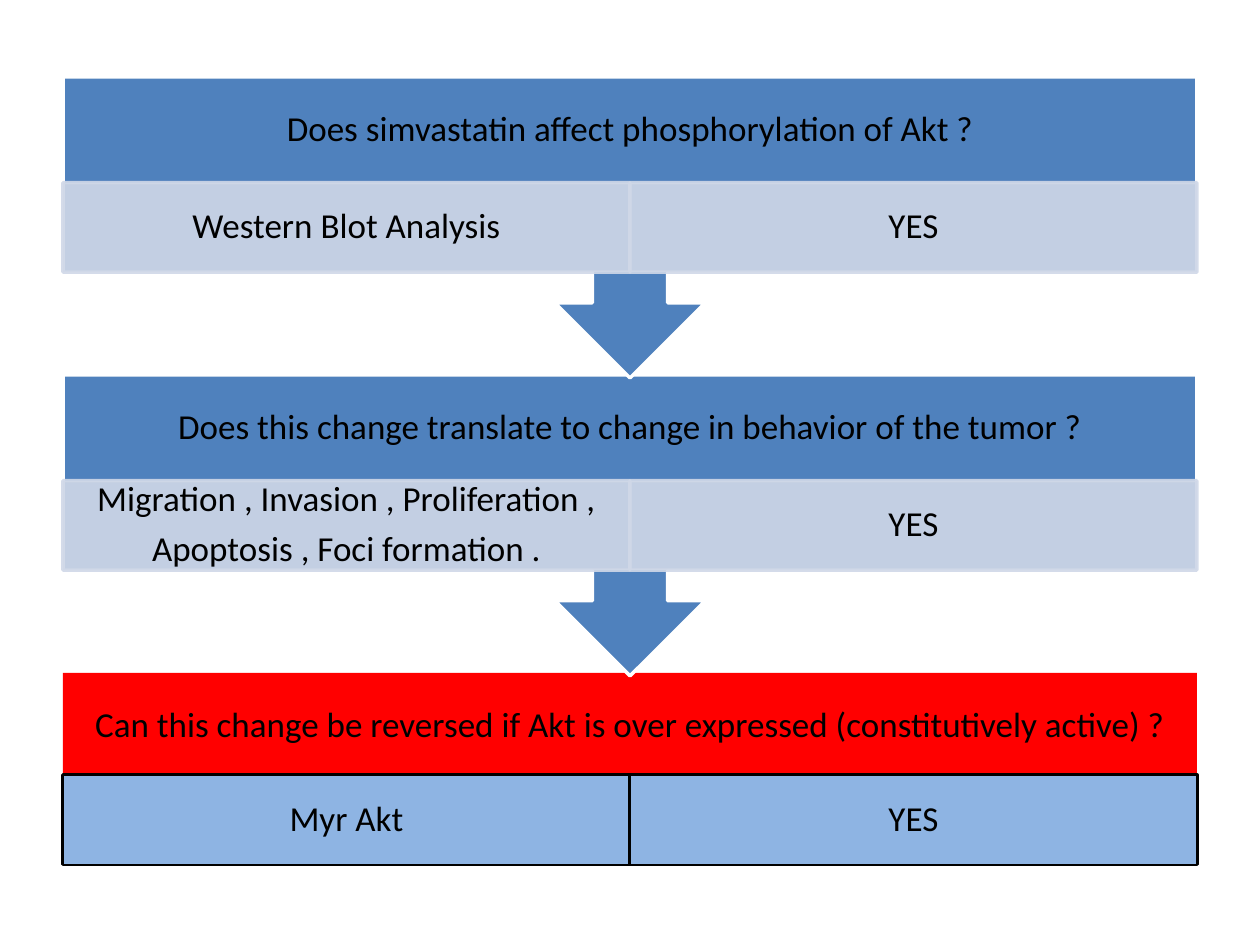
from pptx import Presentation
from pptx.dml.color import RGBColor as RGB
from pptx.enum.shapes import MSO_SHAPE as Shape
from pptx.enum.text import MSO_ANCHOR as Anchor, PP_ALIGN as Align
from pptx.oxml.ns import qn
from pptx.util import Inches, Pt
from lxml import etree

# Content: steps from top to bottom
STEPS = [
    ("Does simvastatin affect phosphorylation of Akt ?",
     ["Western Blot Analysis", "YES"]),
    ("Does this change translate to change in behavior of the tumor ?",
     ["Migration , Invasion , Proliferation ,\nApoptosis , Foci formation .", "YES"]),
    ("Can this change be reversed if Akt is over expressed (constitutively active) ?",
     ["Myr Akt", "YES"]),
]

THEME = {
    "font": "Calibri", "size": 20, "after": 7, "lead": 0.9,
    "ink": "000000", "edge": "FFFFFF", "block": "4F81BD",
    "pale": "D0D8E8", "alert": "FF0000", "sky": "8EB4E3",
}

# Layout in inches
LEFT, TOP, WIDTH, STEP = 0.5, 0.61, 9, 2.365
ARROW, BLOCK, HEAD, CELL = 2.39, 1.55, 0.84, 0.71
HALF = WIDTH / 2

deck = Presentation()
deck.slide_width, deck.slide_height = Inches(10), Inches(7.5)
slide = deck.slides.add_slide(deck.slide_layouts[6])


def fade(color, alpha):
    node = color.find(".//" + qn("a:srgbClr"))
    etree.SubElement(node, qn("a:alpha")).set("val", str(alpha * 1000))


def box(area, fill, line=None, width=2, kind=Shape.RECTANGLE, alpha=None):
    shape = slide.shapes.add_shape(kind, *map(Inches, area))
    shape.shadow.inherit = False
    shape.fill.solid()
    shape.fill.fore_color.rgb = RGB.from_string(THEME[fill])
    if line:
        shape.line.color.rgb = RGB.from_string(THEME[line])
        shape.line.width = Pt(width)
    else:
        shape.line.fill.background()
    if alpha:
        props = shape.fill._xPr
        fade(props.find(qn("a:solidFill")), alpha)
        fade(props.find(qn("a:ln")), alpha)
    return shape


def write(shape, text, pad):
    frame = shape.text_frame
    frame.word_wrap = True
    frame.vertical_anchor = Anchor.MIDDLE
    frame.margin_left = frame.margin_right = Inches(0.16)
    frame.margin_top = frame.margin_bottom = Inches(pad)
    frame.text = text
    for para in frame.paragraphs:
        para.alignment = Align.CENTER
        para.line_spacing = THEME["lead"]
        para.space_after = Pt(THEME["after"])
        for run in para.runs:
            run.font.name = THEME["font"]
            run.font.size = Pt(THEME["size"])
            run.font.color.rgb = RGB.from_string(THEME["ink"])


def label(area):
    return slide.shapes.add_textbox(*map(Inches, area))


# Last step lies at the back, so each arrow tip covers the step below
for i, (question, cells) in reversed(list(enumerate(STEPS))):
    last = i == len(STEPS) - 1
    y = TOP + STEP * i
    head = (LEFT, y, WIDTH, HEAD)

    # Question band, with an arrow to the next step
    if last:
        box((LEFT, y, WIDTH, BLOCK), "block", "edge")
        band = box(head, "alert")
    else:
        arrow = box((LEFT, y, WIDTH, ARROW), "block", "edge",
                    kind=Shape.UP_ARROW_CALLOUT)
        arrow.rotation = 180
        band = label(head)
    write(band, question, 0.16)

    # Method and answer cells
    for j, text in enumerate(cells):
        row = y + (0.81 if last else HEAD)
        area = (LEFT + HALF * j, row, HALF, CELL)
        if last:
            box(area, "sky", "ink")
            cell = box(area, "sky", "ink", 0.75)
        else:
            box(area, "pale", "pale", alpha=90)
            cell = label(area)
        write(cell, text, 0.03)

deck.save("out.pptx")
